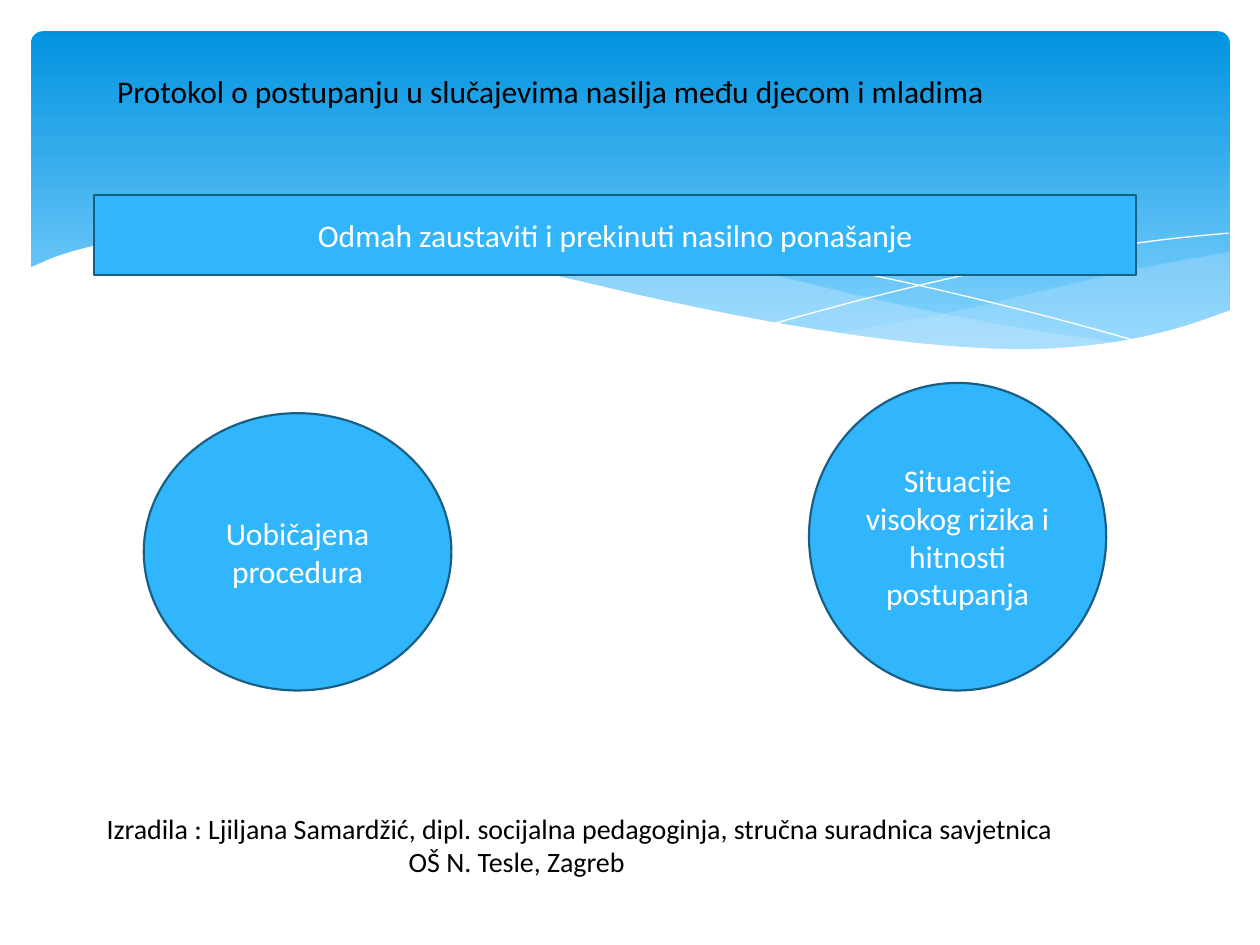
from pptx import Presentation
from pptx import util as u
from pptx.dml import color
from pptx.enum import shapes, text
from pptx.oxml import ns
from lxml import etree

HUES = {"blue": "31B6FD", "edge": "195F84", "deep": "0293E0", "sky": "83D3FE",
        "pale": "C6E7FC", "white": "FFFFFF", "black": "000000"}

# Each wave is a list of curves; each curve is a list of (x, y) in cm.
RIGHT = [
    [(24.79, 5.08), (23.39, 5.33), (21.87, 5.66), (19.13, 6.3), (16.79, 6.73)],
    [(16.79, 6.73), (18.26, 6.91), (20.12, 7.04), (21.69, 7.01), (23.19, 6.78),
     (24.1, 6.53), (24.79, 6.27)],
]
MIDDLE = [
    [(22.68, 6.93), (20.5, 6.6), (17.93, 6.1), (15.98, 5.64), (13.74, 5.16),
     (11.81, 4.85), (10.13, 4.72), (8.74, 4.72), (7.26, 4.85)],
    [(7.26, 4.85), (8.69, 5.05), (10.26, 5.36), (11.4, 5.64), (13.46, 6.1),
     (15.27, 6.48), (17.27, 6.81), (19, 7.01), (20.5, 7.06), (21.77, 7.04),
     (22.68, 6.93)],
]
FALL = [[(7.85, 4.95), (8.97, 4.8), (10.57, 4.75), (12.42, 4.83), (14.12, 5),
         (16.15, 5.28), (18.47, 5.74), (21.11, 6.38), (23.04, 6.91)]]
RISE = [[(15.57, 6.53), (17.65, 5.97), (19.71, 5.49), (22, 5.05),
         (23.47, 4.83), (24.77, 4.7)]]
FRONT = [
    [(24.82, 6.25), (23.62, 6.65), (22.23, 6.93), (20.55, 7.04), (18.44, 6.91),
     (15.9, 6.55), (13.44, 6.07), (11.35, 5.59), (9.27, 5.13), (7.42, 4.83),
     (5.36, 4.67), (3.71, 4.7), (2.41, 4.85), (1.32, 5.11), (0.58, 5.41)],
    [(0.58, 8.36), (24.82, 8.36)],
]


def rgb(hue):
    return color.RGBColor.from_string(HUES[hue])


def smooth(curve, steps=5):
    """Return points of a Catmull-Rom spline through the curve's points."""
    ends = [curve[0], *curve, curve[-1]]
    spots = [curve[0]]
    for a, b, c, d in zip(ends, ends[1:], ends[2:], ends[3:]):
        for step in range(1, steps + 1):
            t = step / steps
            spots.append(tuple(
                (2 * q + (r - p) * t + (2 * p - 5 * q + 4 * r - s) * t ** 2
                 + (3 * q - p - 3 * r + s) * t ** 3) / 2
                for p, q, r, s in zip(a, b, c, d)))
    return spots


def write(shape, *lines, size=18, hue="black", align=text.PP_ALIGN.LEFT,
          anchor=text.MSO_ANCHOR.TOP, indents=()):
    """Fill the shape with one paragraph a line; indents are in cm."""
    frame = shape.text_frame
    frame.word_wrap = True
    frame.vertical_anchor = anchor
    frame.text = "\n".join(lines)
    for para in frame.paragraphs:
        para.alignment = align
        para.font.size = u.Pt(size)
        para.font.name = "Calibri"
        para.font.color.rgb = rgb(hue)
    for para, indent in zip(frame.paragraphs, indents):
        para._p.get_or_add_pPr().set("marL", str(u.Cm(indent)))


class Board:
    def __init__(self, deck):
        self.slide = deck.slides.add_slide(deck.slide_layouts[6])
        self.fill, self.edge, self.width = "blue", "edge", 1.25

    def shape(self, kind, *box):
        item = self.slide.shapes.add_shape(kind, *map(u.Cm, box))
        item.shadow.inherit = False
        return item

    def label(self, kind, words, *box):
        item = self.shape(kind, *box)
        item.fill.solid()
        item.fill.fore_color.rgb = rgb(self.fill)
        item.line.color.rgb = rgb(self.edge)
        item.line.width = u.Pt(self.width)
        write(item, words, hue="white", align=text.PP_ALIGN.CENTER,
              anchor=text.MSO_ANCHOR.MIDDLE)

    def note(self, lines, *box, **style):
        write(self.slide.shapes.add_textbox(*map(u.Cm, box)), *lines, **style)

    def banner(self, *box):
        item = self.shape(shapes.MSO_SHAPE.ROUNDED_RECTANGLE, *box)
        item.adjustments[0] = 0.034
        item.line.fill.background()
        item.fill.gradient()
        item.fill.gradient_angle = 270
        for stop, hue, place in zip(item.fill.gradient_stops,
                                    ("deep", "sky"), (0, 0.9)):
            stop.color.rgb = rgb(hue)
            stop.position = place

    def trace(self, curves, close):
        spots = [(u.Cm(x), u.Cm(y)) for c in curves for x, y in smooth(c)]
        pen = self.slide.shapes.build_freeform(*spots[0])
        pen.add_line_segments(spots[1:], close=close)
        item = pen.convert_to_shape()
        item.shadow.inherit = False
        return item

    def wave(self, curves, hue, alpha=100):
        """Draw a filled wave; alpha is its opacity in percent."""
        item = self.trace(curves, True)
        item.line.fill.background()
        item.fill.solid()
        item.fill.fore_color.rgb = rgb(hue)
        if alpha < 100:
            tint = item._element.spPr.find(".//" + ns.qn("a:srgbClr"))
            etree.SubElement(tint, ns.qn("a:alpha"), val=str(alpha * 1000))

    def strand(self, curves):
        item = self.trace(curves, False)
        item.fill.background()
        item.line.color.rgb = rgb("white")
        item.line.width = u.Pt(0)


def main():
    deck = Presentation()
    deck.slide_width, deck.slide_height = u.Cm(25.4), u.Cm(19.05)
    board = Board(deck)

    board.banner(0.63, 0.63, 24.16, 6.86)
    board.wave(RIGHT, "pale", 29)
    board.wave(MIDDLE, "pale", 40)
    board.strand(FALL)
    board.strand(RISE)
    board.wave(FRONT, "white")

    oval, rect = shapes.MSO_SHAPE.OVAL, shapes.MSO_SHAPE.RECTANGLE
    board.label(oval, "Uobičajena procedura", 2.9, 8.33, 6.2, 5.59)
    board.note(["Protokol o postupanju u slučajevima nasilja među djecom i mladima"],
               2.11, 1.32, 20.19, 1.8)
    board.label(rect, "Odmah zaustaviti i prekinuti nasilno ponašanje",
                1.9, 3.94, 21.01, 1.6)
    board.label(oval, "Situacije visokog rizika i hitnosti postupanja",
                16.31, 7.72, 5.99, 6.2)
    board.note(["Izradila : Ljiljana Samardžić, dipl. socijalna pedagoginja, "
                "stručna suradnica savjetnica", "OŠ N. Tesle, Zagreb"],
               1.9, 14.83, 21.01, 3, size=16, indents=(0, 6.09),
               anchor=text.MSO_ANCHOR.BOTTOM)
    deck.save("out.pptx")


if __name__ == "__main__":
    main()
